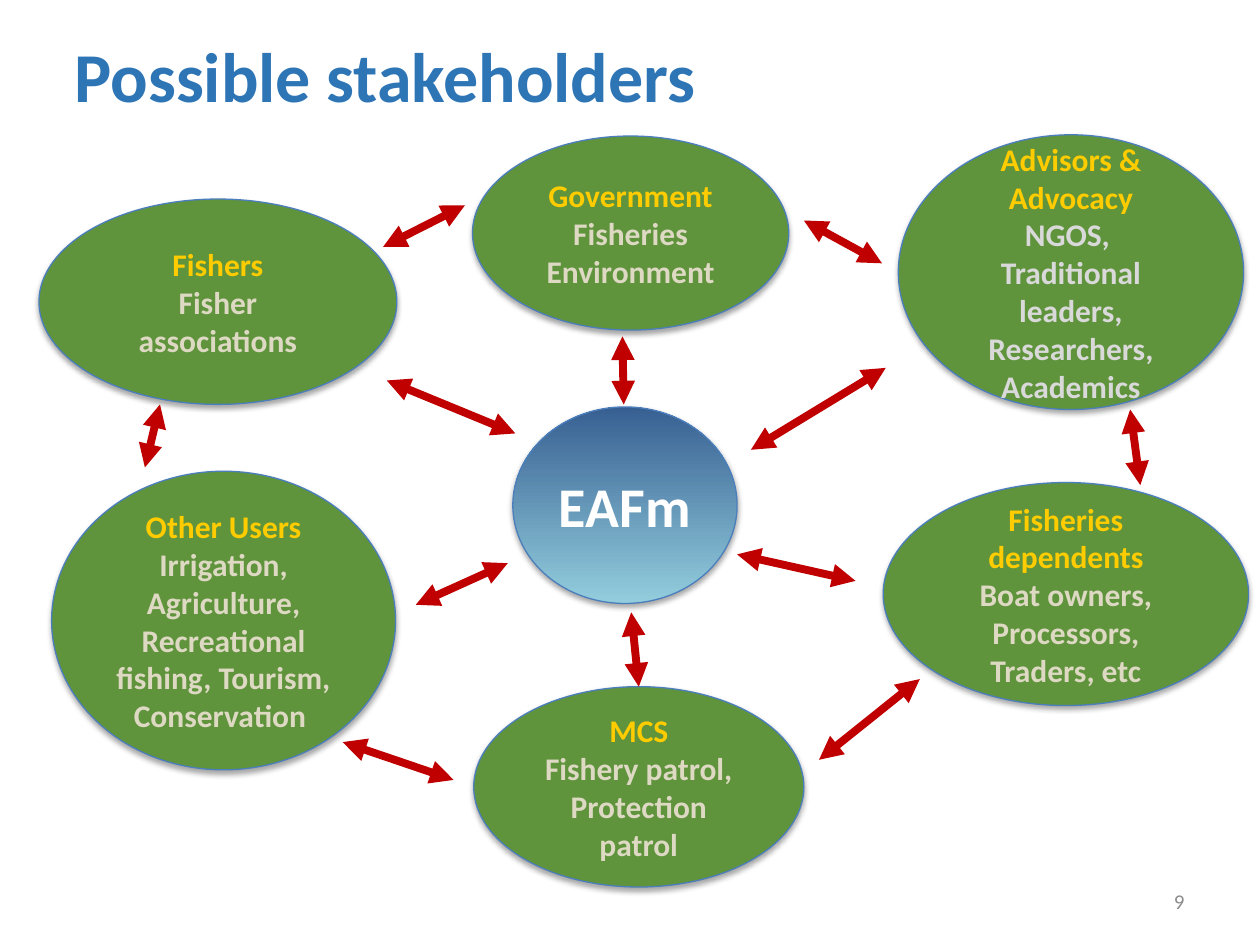
from dataclasses import dataclass

from pptx import Presentation
from pptx.dml.color import RGBColor as RGB
from pptx.enum.shapes import MSO_CONNECTOR as CONN, MSO_SHAPE as SHAPE
from pptx.enum.text import MSO_ANCHOR as ANCHOR, PP_ALIGN as ALIGN
from pptx.oxml.ns import qn
from pptx.oxml.xmlchemy import OxmlElement
from pptx.util import Inches, Pt


@dataclass(frozen=True)
class Theme:
    font: str = "Calibri"
    title: str = "2E75B6"
    group: str = "5F933C"
    outline: str = "4B7EBC"
    heading: str = "FFCC00"
    member: str = "DDD9C3"
    advisor: str = "D9D9D9"
    hub_bottom: str = "93CDDD"
    hub_top: str = "376092"
    arrow: str = "C00000"
    white: str = "FFFFFF"
    number: str = "8C8C8C"
    title_size: int = 40
    hub_size: int = 32
    body_size: int = 18
    number_size: int = 12


THEME = Theme()

GROUPS = [
    ((0.31, 1.58, 2.84, 1.63), "Fishers", ["Fisher associations"], THEME.member),
    ((3.75, 1.08, 2.51, 1.54), "Government", ["Fisheries", "Environment"], THEME.member),
    ((7.01, 3.83, 2.9, 1.77), "Fisheries dependents",
     ["Boat owners, Processors, Traders, etc"], THEME.member),
    ((3.76, 5.45, 2.62, 1.59), "MCS", ["Fishery patrol, Protection patrol"], THEME.member),
    ((7.13, 1.07, 2.74, 2.18), "Advisors & Advocacy",
     ["NGOS, ", "Traditional leaders,", "Researchers, Academics"], THEME.advisor),
    ((0.41, 3.74, 2.73, 2.37), "Other Users",
     ["Irrigation, Agriculture, Recreational fishing, Tourism, Conservation "], THEME.member),
]

HUB_ARROWS = [
    (6.79, 4.61, 5.85, 4.4),
    (7.03, 2.92, 5.96, 3.57),
    (4.94, 2.67, 4.95, 3.21),
    (4.09, 3.44, 3.07, 3.02),
    (5.07, 5.45, 5.01, 4.86),
    (4.03, 4.47, 3.3, 4.8),
]

RING_ARROWS = [
    (7.3, 5.39, 6.5, 6.03),
    (3.6, 6.19, 2.72, 5.89),
    (8.97, 3.25, 9.05, 3.85),
    (3.69, 1.63, 3.04, 1.96),
    (6.38, 1.75, 7, 2.09),
    (1.27, 3.21, 1.15, 3.71),
]


def add_xml(parent, tag, **attrs):
    child = OxmlElement(tag)
    for name, value in attrs.items():
        child.set(name, str(value))
    parent.append(child)
    return child


def write(tf, lines, size, bold=True, align=ALIGN.CENTER):
    tf.word_wrap = True
    tf.vertical_anchor = ANCHOR.MIDDLE
    for i, (text, color) in enumerate(lines):
        p = tf.add_paragraph() if i else tf.paragraphs[0]
        p.text = text
        p.alignment = align
        p.font.name = THEME.font
        p.font.size = Pt(size)
        p.font.bold = bold
        p.font.color.rgb = RGB.from_string(color)


def add_title(s, text):
    title = s.shapes.title
    title.left, title.top, title.width, title.height = map(Inches, (0.14, 0.18, 5.96, 0.83))
    title.fill.solid()
    title.fill.fore_color.rgb = RGB.from_string(THEME.white)
    write(title.text_frame, [(text, THEME.title)], THEME.title_size)


def add_shadow(sp):
    sp.shadow.inherit = False
    effects = sp.element.spPr.find(qn("a:effectLst"))
    shadow = add_xml(effects, "a:outerShdw", blurRad=Pt(3.1), dist=Pt(1.8),
                     dir=90 * 60000, rotWithShape=0)
    color = add_xml(shadow, "a:srgbClr", val="000000")
    add_xml(color, "a:alpha", val=35000)


def add_ellipse(s, box, lines, size):
    sp = s.shapes.add_shape(SHAPE.OVAL, *map(Inches, box))
    sp.line.color.rgb = RGB.from_string(THEME.outline)
    sp.line.width = Pt(0.75)
    add_shadow(sp)
    write(sp.text_frame, lines, size)
    return sp


def add_group(s, box, heading, members, color):
    lines = [(heading, THEME.heading)] + [(member, color) for member in members]
    sp = add_ellipse(s, box, lines, THEME.body_size)
    sp.fill.solid()
    sp.fill.fore_color.rgb = RGB.from_string(THEME.group)


def add_hub(s, box, text):
    sp = add_ellipse(s, box, [(text, THEME.white)], THEME.hub_size)
    sp.fill.gradient()
    sp.fill.gradient_angle = 90
    for stop, color in zip(sp.fill.gradient_stops, (THEME.hub_bottom, THEME.hub_top)):
        stop.color.rgb = RGB.from_string(color)


def add_arrow(s, ends):
    arrow = s.shapes.add_connector(CONN.STRAIGHT, *map(Inches, ends))
    arrow.line.color.rgb = RGB.from_string(THEME.arrow)
    arrow.line.width = Pt(4.5)
    props = arrow.element.spPr
    for tag in ("a:headEnd", "a:tailEnd"):
        add_xml(props.find(qn("a:ln")), tag, type="triangle")
    add_xml(props, "a:effectLst")


def add_number(s, text):
    box = s.shapes.add_textbox(*map(Inches, (7.17, 6.95, 2.33, 0.4)))
    write(box.text_frame, [(text, THEME.number)], THEME.number_size,
          bold=False, align=ALIGN.RIGHT)


def main():
    prs = Presentation()
    prs.slide_width, prs.slide_height = Inches(10), Inches(7.5)
    s = prs.slides.add_slide(prs.slide_layouts.get_by_name("Title Only"))
    add_title(s, "Possible stakeholders ")
    add_number(s, "9")
    for group in GROUPS:
        add_group(s, *group)
    add_hub(s, (4.07, 3.23, 1.78, 1.56), "EAFm")
    for ends in HUB_ARROWS + RING_ARROWS:
        add_arrow(s, ends)
    prs.save("out.pptx")


if __name__ == "__main__":
    main()
